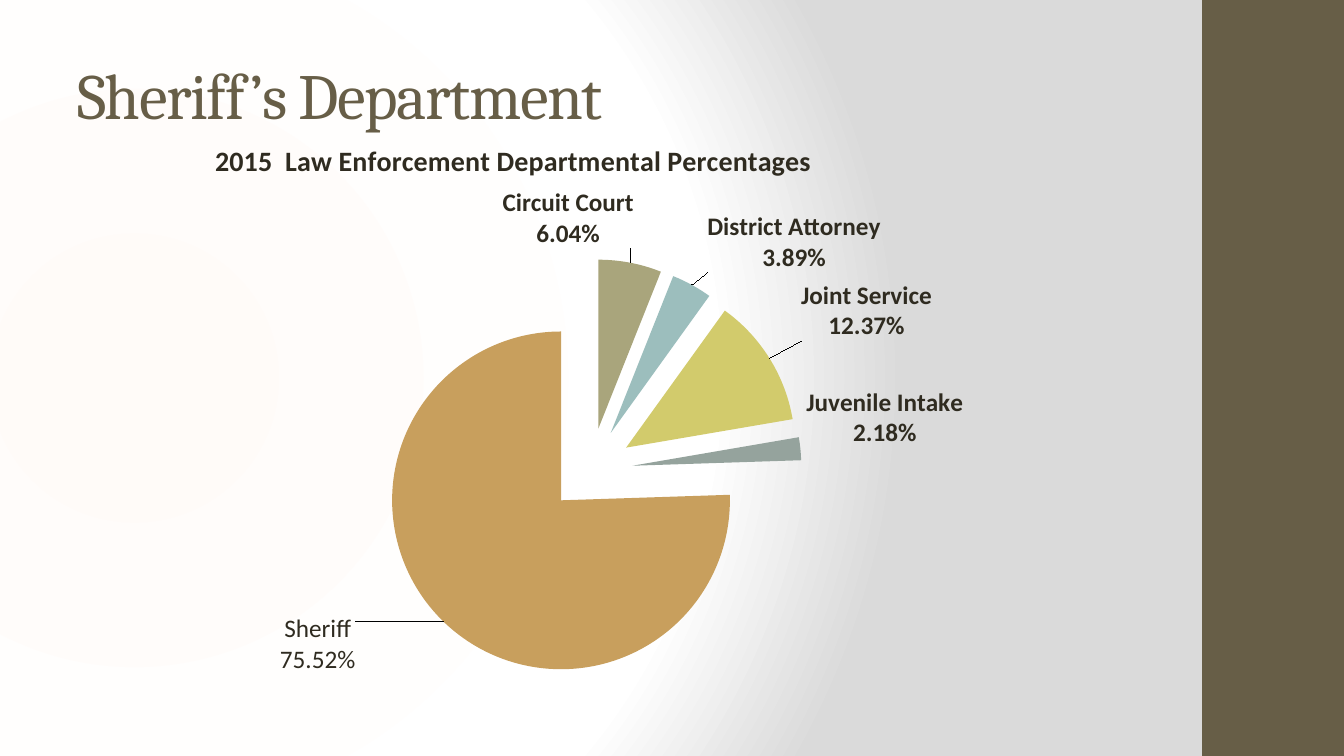
from dataclasses import dataclass

from pptx import Presentation
from pptx.chart.data import CategoryChartData
from pptx.dml.color import RGBColor
from pptx.enum.chart import XL_CHART_TYPE, XL_LABEL_POSITION
from pptx.enum.shapes import MSO_SHAPE
from pptx.enum.text import MSO_ANCHOR
from pptx.oxml import parse_xml
from pptx.oxml.ns import nsdecls
from pptx.slide import Slide
from pptx.util import Pt

RECTANGLE = MSO_SHAPE.RECTANGLE
MIDDLE = MSO_ANCHOR.MIDDLE
PIE_EXPLODED = XL_CHART_TYPE.PIE_EXPLODED
OUTSIDE_END = XL_LABEL_POSITION.OUTSIDE_END

BROWN = RGBColor(0x67, 0x5E, 0x47)
INK = RGBColor(0x2F, 0x2B, 0x20)
CREAM = RGBColor(0xFF, 0xFB, 0xF8)
WHITE = RGBColor(0xFF, 0xFF, 0xFF)
GRAY = RGBColor(0xDA, 0xDA, 0xDA)
OLIVE = RGBColor(0xA9, 0xA5, 0x7C)
TEAL = RGBColor(0x9C, 0xBE, 0xBD)
LIME = RGBColor(0xD2, 0xCB, 0x6C)
SAGE = RGBColor(0x95, 0xA3, 0x9D)
TAN = RGBColor(0xC8, 0x9F, 0x5D)

BACKGROUND_STOPS = {0: CREAM, 75: WHITE, 100: GRAY}
PERCENT_FORMAT = "0.00%"
LABEL_SIZE = 18
CHART_WIDTH = 768
CHART_HEIGHT = 426


@dataclass(frozen=True)
class Slice:
    name: str
    percent: float
    color: RGBColor
    label_shift: tuple[float, float] | None = None
    bold: bool = True


SLICES = [
    Slice("Circuit Court", 6.04, OLIVE, (-92, -6)),
    Slice("District Attorney", 3.89, TEAL, (9, -5)),
    Slice("Joint Service", 12.37, LIME, (19, -10)),
    Slice("Juvenile Intake", 2.18, SAGE),
    Slice("Sheriff", 75.52, TAN, (-60, -9), bold=False),
]


def set_attributes(target: object, values: dict[str, object]) -> None:
    for name, value in values.items():
        setattr(target, name, value)


def layout_xml(modes: dict[str, str], **lengths: float) -> str:
    spans = {"x": CHART_WIDTH, "y": CHART_HEIGHT, "w": CHART_WIDTH, "h": CHART_HEIGHT}
    values = modes | {tag: length / spans[tag] for tag, length in lengths.items()}
    children = "".join(f'<c:{tag} val="{value}"/>' for tag, value in values.items())
    return f'<c:layout {nsdecls("c")}><c:manualLayout>{children}</c:manualLayout></c:layout>'


def label_xml(index: int, piece: Slice) -> str:
    shift_x, shift_y = piece.label_shift
    return (
        f'<c:dLbl {nsdecls("c", "a")}><c:idx val="{index}"/>'
        f'{layout_xml({}, x=shift_x, y=shift_y)}'
        f'<c:numFmt formatCode="{PERCENT_FORMAT}" sourceLinked="0"/>'
        '<c:spPr><a:noFill/><a:ln><a:noFill/></a:ln></c:spPr>'
        f'<c:txPr><a:bodyPr/><a:p><a:pPr><a:defRPr sz="{LABEL_SIZE * 100}" b="{int(piece.bold)}">'
        f'<a:solidFill><a:srgbClr val="{INK}"/></a:solidFill><a:latin typeface="Calibri"/>'
        '</a:defRPr></a:pPr><a:endParaRPr lang="en-US"/></a:p></c:txPr>'
        '<c:dLblPos val="outEnd"/><c:showLegendKey val="0"/><c:showVal val="0"/>'
        '<c:showCatName val="1"/><c:showSerName val="0"/><c:showPercent val="1"/>'
        '<c:showBubbleSize val="0"/><c:separator>\n</c:separator></c:dLbl>'
    )


def paint_background(slide: Slide) -> None:
    slide.background.fill.solid()
    stops = "".join(
        f'<a:gs pos="{position * 1000}"><a:srgbClr val="{color}"/></a:gs>'
        for position, color in BACKGROUND_STOPS.items()
    )
    gradient = parse_xml(
        f'<a:gradFill {nsdecls("a")} rotWithShape="1"><a:gsLst>{stops}</a:gsLst>'
        '<a:path path="circle"><a:fillToRect l="20000" t="50000" r="100000" b="50000"/>'
        '</a:path></a:gradFill>'
    )
    properties = slide.element.xpath(".//p:bgPr")[0]
    properties.replace(properties[0], gradient)


def add_side_bar(slide: Slide) -> None:
    bar = slide.shapes.add_shape(RECTANGLE, Pt(858.6), Pt(0), Pt(101.4), Pt(540))
    bar.shadow.inherit = False
    bar.fill.solid()
    bar.fill.fore_color.rgb = BROWN
    bar.line.fill.background()


def add_title(slide: Slide) -> None:
    box = slide.shapes.add_textbox(Pt(48), Pt(21.6), Pt(800), Pt(90))
    frame = box.text_frame
    set_attributes(frame, {"word_wrap": True, "vertical_anchor": MIDDLE})
    run = frame.paragraphs[0].add_run()
    run.text = "Sheriff’s Department"
    set_attributes(run.font, {"name": "Cambria", "size": Pt(46)})
    run.font.color.rgb = BROWN
    run.font._element.set("spc", "-100")


def add_pie(slide: Slide) -> None:
    data = CategoryChartData()
    data.categories = [piece.name for piece in SLICES]
    data.add_series("Series 1", [piece.percent for piece in SLICES])
    frame = slide.shapes.add_chart(
        PIE_EXPLODED, Pt(54), Pt(96), Pt(CHART_WIDTH), Pt(CHART_HEIGHT), data
    )
    chart = frame.chart
    set_attributes(chart, {"has_legend": False, "has_title": True})
    set_attributes(chart.font, {"name": "Calibri", "size": Pt(10)})
    chart.font.color.rgb = INK

    run = chart.chart_title.text_frame.paragraphs[0].add_run()
    run.text = "2015  Law Enforcement Departmental Percentages"
    set_attributes(run.font, {"name": "Calibri", "size": Pt(20), "bold": True})
    run.font.color.rgb = INK

    for layout in chart.element.xpath(".//c:title/c:layout | .//c:plotArea/c:layout"):
        layout.getparent().remove(layout)
    edges = {"xMode": "edge", "yMode": "edge"}
    title_text = chart.element.xpath(".//c:title/c:tx")[0]
    title_text.addnext(parse_xml(layout_xml(edges, x=96, y=0.6)))
    plot_layout = layout_xml({"layoutTarget": "inner"} | edges, x=31, y=89, w=673.5, h=301.6)
    chart.element.xpath(".//c:plotArea")[0].insert(0, parse_xml(plot_layout))

    plot = chart.plots[0]
    plot.vary_by_categories = True
    series = plot.series[0]
    for index, piece in enumerate(SLICES):
        fill = series.points[index].format.fill
        fill.solid()
        fill.fore_color.rgb = piece.color

    labels = series.data_labels
    set_attributes(labels, {
        "show_value": False,
        "show_category_name": True,
        "show_percentage": True,
        "number_format": PERCENT_FORMAT,
        "number_format_is_linked": False,
        "position": OUTSIDE_END,
    })
    set_attributes(labels.font, {"name": "Calibri", "size": Pt(LABEL_SIZE), "bold": True})
    labels.font.color.rgb = INK
    group = chart.element.xpath(".//c:ser/c:dLbls")[0]
    separator = parse_xml(f'<c:separator {nsdecls("c")}>\n</c:separator>')
    group.xpath("c:showBubbleSize | c:showPercent")[-1].addnext(separator)
    shifted = [(index, piece) for index, piece in enumerate(SLICES) if piece.label_shift]
    for place, (index, piece) in enumerate(shifted):
        group.insert(place, parse_xml(label_xml(index, piece)))


def main() -> None:
    presentation = Presentation()
    set_attributes(presentation, {"slide_width": Pt(960), "slide_height": Pt(540)})
    slide = presentation.slides.add_slide(presentation.slide_layouts[6])
    paint_background(slide)
    add_side_bar(slide)
    add_title(slide)
    add_pie(slide)
    presentation.save("out.pptx")


if __name__ == "__main__":
    main()
